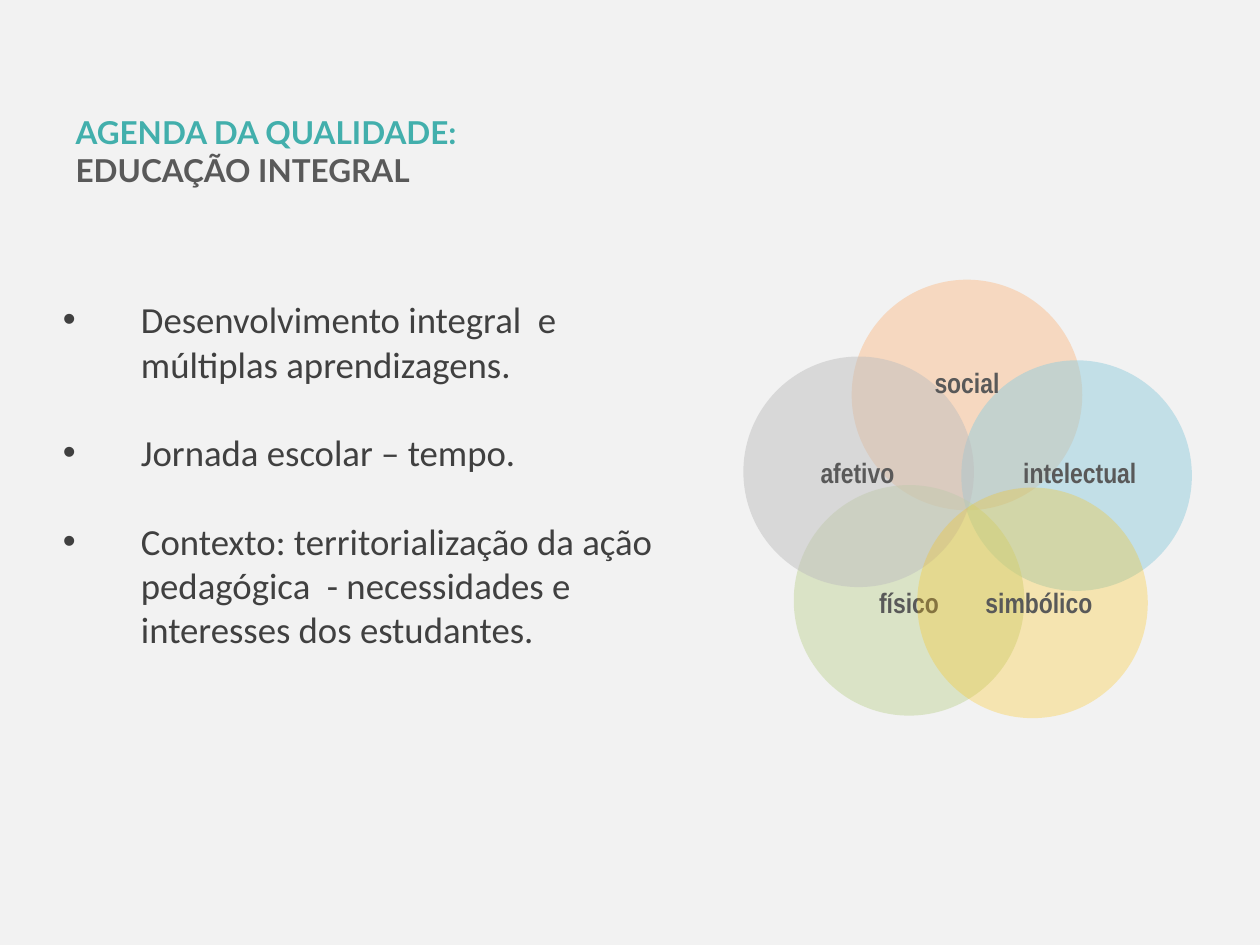
from pptx import Presentation, util as u
from pptx.dml.color import RGBColor
from pptx.enum import shapes, text
from pptx.oxml.ns import qn
from lxml import etree

HUES = {
    "back": "F2F2F2", "teal": "42AFAC", "gray": "595959", "ink": "404040",
    "peach": "FAC090", "blue": "93CDDD", "green": "C3D69B",
    "silver": "BFBFBF", "gold": "FFC000",
}
SIZE = 1.83


class Deck:
    def __init__(self):
        self.prs = Presentation()
        self.prs.slide_width = u.Inches(10)
        self.prs.slide_height = u.Inches(7.5)
        self.slide = self.prs.slides.add_slide(self.prs.slide_layouts[5])
        fill = self.slide.background.fill
        fill.solid()
        fill.fore_color.rgb = self.hue("back")

    def hue(self, name):
        return RGBColor.from_string(HUES[name])

    def style(self, para, face, size, hue, bold=False):
        font = para.font
        font.name, font.size, font.bold = face, u.Pt(size), bold
        font.color.rgb = self.hue(hue)

    def frame(self, shape):
        frame = shape.text_frame
        frame.word_wrap = True
        frame.auto_size = text.MSO_AUTO_SIZE.NONE
        frame.vertical_anchor = text.MSO_ANCHOR.TOP
        return frame

    def box(self, *area):
        return self.frame(self.slide.shapes.add_textbox(*map(u.Inches, area)))

    def title(self, area, lines):
        shape = self.slide.shapes.title
        shape.left, shape.top, shape.width, shape.height = map(u.Inches, area)
        frame = self.frame(shape)
        frame.text = "\n".join(line for line, _ in lines)
        for para, (_, hue) in zip(frame.paragraphs, lines):
            para.alignment = text.PP_ALIGN.LEFT
            self.style(para, "Lato", 18, hue, True)

    def bullets(self, area, items):
        frame = self.box(*area)
        frame.text = "\n".join(items)
        for i, para in enumerate(frame.paragraphs):
            self.style(para, "Calibri", 21, "ink")
            para.space_before = u.Pt(25.4 if i else 0)
            props = para._p.get_or_add_pPr()
            props.set("marL", str(u.Inches(0.62)))
            props.set("indent", str(-u.Inches(0.62)))
            face = etree.SubElement(props, qn("a:buFont"))
            face.set("typeface", "Arial")
            mark = etree.SubElement(props, qn("a:buChar"))
            mark.set("char", "•")
            props.append(props.find(qn("a:defRPr")))

    def circle(self, left, top, hue, alpha=50):
        area = map(u.Inches, (left, top, SIZE, SIZE))
        shape = self.slide.shapes.add_shape(shapes.MSO_SHAPE.OVAL, *area)
        shape.shadow.inherit = False
        shape.line.fill.background()
        shape.fill.solid()
        shape.fill.fore_color.rgb = self.hue(hue)
        color = shape._element.spPr.find(".//" + qn("a:srgbClr"))
        etree.SubElement(color, qn("a:alpha")).set("val", str(alpha * 1000))

    def label(self, word, left, top, width=SIZE):
        para = self.box(left, top, width, 0.37).paragraphs[0]
        para.text = word
        para.alignment = text.PP_ALIGN.CENTER
        self.style(para, "Arial Narrow", 16, "gray", True)


def main():
    deck = Deck()
    deck.title((0.5, 0.85, 8.5, 0.71), [
        ("AGENDA DA QUALIDADE:", "teal"),
        ("EDUCAÇÃO INTEGRAL", "gray"),
    ])
    deck.bullets((0.4, 2.31, 5.15, 3.77), [
        "Desenvolvimento integral  e múltiplas aprendizagens.",
        "Jornada escolar – tempo.",
        "Contexto: territorialização da ação pedagógica  - necessidades e "
        "interesses dos estudantes.",
    ])
    for disc in [(6.76, 2.22, "peach"), (7.63, 2.86, "blue"),
                 (6.3, 3.85, "green"), (5.9, 2.83, "silver")]:
        deck.circle(*disc)
    for tag in [("físico", 6.3, 4.6), ("intelectual", 7.68, 3.57, 1.78),
                ("afetivo", 5.9, 3.57, 1.81), ("social", 6.76, 2.85)]:
        deck.label(*tag)
    deck.circle(7.28, 3.87, "gold", 27)
    deck.label("simbólico", 7.2, 4.6, 2.09)
    deck.prs.save("out.pptx")


if __name__ == "__main__":
    main()
